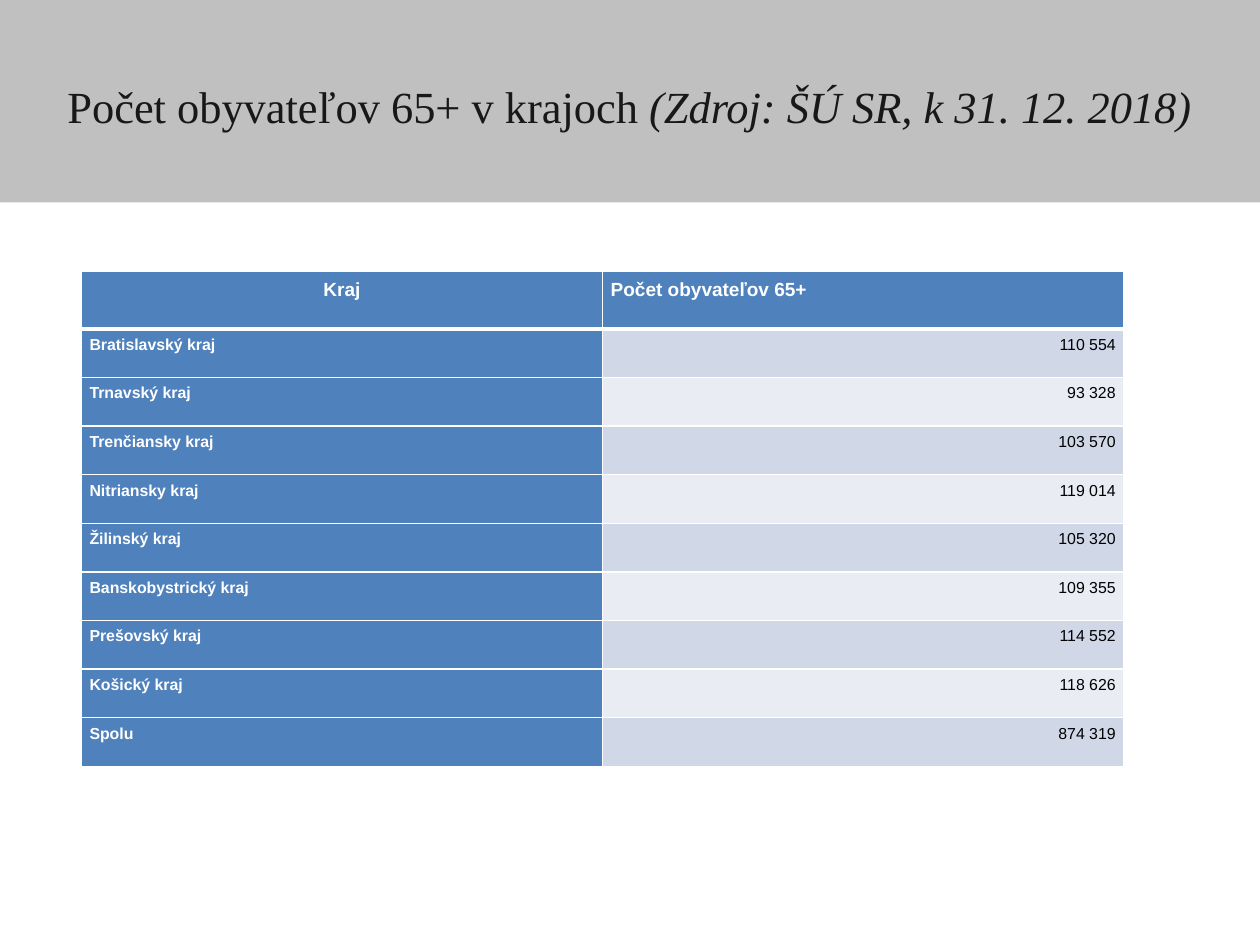
from dataclasses import dataclass

from lxml.etree import SubElement
from pptx import Presentation
from pptx.dml.color import RGBColor
from pptx.enum.shapes import MSO_SHAPE
from pptx.enum.text import MSO_ANCHOR, PP_ALIGN
from pptx.oxml.ns import qn
from pptx.util import Cm, Pt


@dataclass(frozen=True)
class Theme:
    band: str = "C0C0C0"
    title: str = "181818"
    accent: str = "4F81BD"
    stripes: tuple[str, str] = ("D0D8E7", "E9ECF3")
    white: str = "FFFFFF"
    black: str = "000000"
    title_font: str = "Times New Roman"
    table_font: str = "Arial"
    title_size: float = 28
    header_size: float = 12
    body_size: float = 10
    thin_line: float = 0.96
    thick_line: float = 3


@dataclass(frozen=True)
class Region:
    name: str
    count: str


@dataclass(frozen=True)
class CellStyle:
    fill: str
    color: str
    size: float
    bold: bool
    align: PP_ALIGN
    top: float
    bottom: float


THEME = Theme()
REGIONS = [
    Region("Bratislavský kraj", "110 554"),
    Region("Trnavský kraj", "93 328"),
    Region("Trenčiansky kraj", "103 570"),
    Region("Nitriansky kraj", "119 014"),
    Region("Žilinský kraj", "105 320"),
    Region("Banskobystrický kraj", "109 355"),
    Region("Prešovský kraj", "114 552"),
    Region("Košický kraj", "118 626"),
    Region("Spolu", "874 319"),
]


def rgb(color: str) -> RGBColor:
    return RGBColor.from_string(color)


def add_border(cell, side: str, width: float) -> None:
    line = SubElement(cell._tc.get_or_add_tcPr(), qn(f"a:ln{side}"), w=str(Pt(width)))
    fill = SubElement(line, qn("a:solidFill"))
    SubElement(fill, qn("a:srgbClr"), val=THEME.white)


def fill_cell(cell, text: str, style: CellStyle) -> None:
    borders = {"L": THEME.thin_line, "R": THEME.thin_line, "T": style.top, "B": style.bottom}
    for side, width in borders.items():
        add_border(cell, side, width)
    cell.fill.solid()
    cell.fill.fore_color.rgb = rgb(style.fill)
    cell.margin_left = cell.margin_right = Cm(0.18)
    cell.margin_top = cell.margin_bottom = Cm(0.13)
    para = cell.text_frame.paragraphs[0]
    para.text = text
    para.alignment = style.align
    para.line_spacing = 1.07
    para.space_after = Pt(8)
    para.font.name = THEME.table_font
    para.font.size = Pt(style.size)
    para.font.bold = style.bold
    para.font.color.rgb = rgb(style.color)


def add_title(page, width: int) -> None:
    band = page.shapes.add_shape(MSO_SHAPE.RECTANGLE, 0, 0, width, Cm(4.5))
    band.shadow.inherit = False
    band.fill.solid()
    band.fill.fore_color.rgb = rgb(THEME.band)
    band.line.fill.background()

    box = page.shapes.add_textbox(Cm(1.5), Cm(0.6), Cm(25.2), Cm(3.5))
    frame = box.text_frame
    frame.word_wrap = True
    frame.vertical_anchor = MSO_ANCHOR.MIDDLE
    frame.margin_left = frame.margin_right = frame.margin_top = frame.margin_bottom = 0
    para = frame.paragraphs[0]
    para.font.name = THEME.title_font
    para.font.size = Pt(THEME.title_size)
    para.font.color.rgb = rgb(THEME.title)
    para.add_run().text = "Počet obyvateľov 65+ v krajoch "
    source = para.add_run()
    source.text = "(Zdroj: ŠÚ SR, k 31. 12. 2018)"
    source.font.italic = True


def add_region_table(page) -> None:
    header_height, row_height = Cm(1.27), Cm(1.08)
    row_count = len(REGIONS) + 1
    height = header_height + row_height * len(REGIONS)
    table = page.shapes.add_table(row_count, 2, Cm(1.81), Cm(6.04), Cm(23.16), height).table
    for row in table.rows:
        row.height = row_height
    table.rows[0].height = header_height

    # Header row
    headings = [("Kraj", PP_ALIGN.CENTER), ("Počet obyvateľov 65+", PP_ALIGN.JUSTIFY)]
    for column, (text, align) in enumerate(headings):
        style = CellStyle(THEME.accent, THEME.white, THEME.header_size, True, align,
                          THEME.thin_line, THEME.thick_line)
        fill_cell(table.cell(0, column), text, style)

    # Region rows with alternating stripes
    for index, region in enumerate(REGIONS):
        top = THEME.thin_line if index else THEME.thick_line
        name_style = CellStyle(THEME.accent, THEME.white, THEME.body_size, True,
                               PP_ALIGN.JUSTIFY, top, THEME.thin_line)
        count_style = CellStyle(THEME.stripes[index % 2], THEME.black, THEME.body_size, False,
                                PP_ALIGN.RIGHT, top, THEME.thin_line)
        fill_cell(table.cell(index + 1, 0), region.name, name_style)
        fill_cell(table.cell(index + 1, 1), region.count, count_style)


def main() -> None:
    deck = Presentation()
    deck.slide_width, deck.slide_height = Cm(28), Cm(21)
    page = deck.slides.add_slide(deck.slide_layouts[6])
    add_title(page, deck.slide_width)
    add_region_table(page)
    deck.save("out.pptx")


if __name__ == "__main__":
    main()
